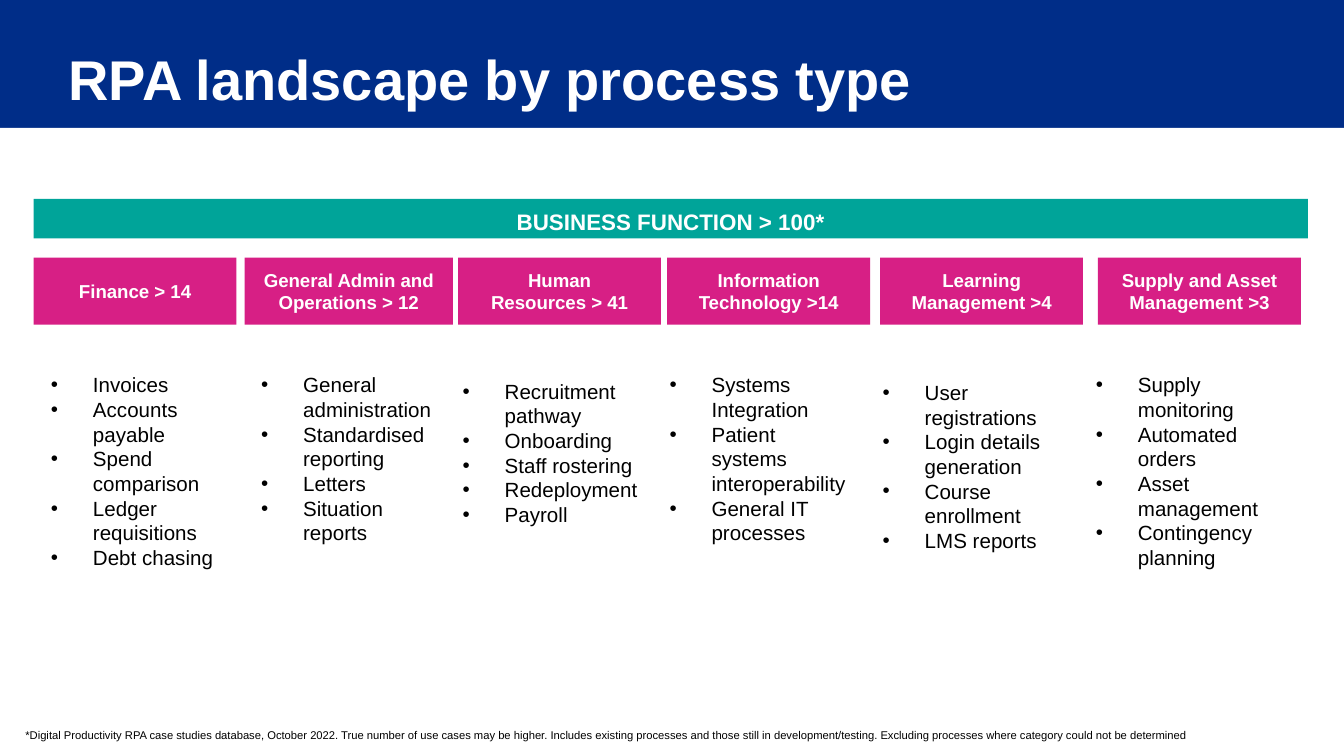
from lxml.etree import SubElement
from pptx import Presentation
from pptx.dml.color import RGBColor
from pptx.enum.shapes import MSO_SHAPE
from pptx.enum.text import MSO_ANCHOR, PP_ALIGN
from pptx.oxml.ns import qn
from pptx.util import Pt

NAVY = RGBColor(0x00, 0x2D, 0x88)
TEAL = RGBColor(0x00, 0xA4, 0x99)
PINK = RGBColor(0xD7, 0x1F, 0x85)
WHITE = RGBColor(0xFF, 0xFF, 0xFF)
BLACK = RGBColor(0x00, 0x00, 0x00)

INDENT = 22.5
LIST_W = 111.5

# Heading, its left and width; list left and top; list items
COLUMNS = [
    (["Finance > 14"], 18, 108.7, 20.2, 196,
     ["Invoices", "Accounts payable", "Spend comparison",
      "Ledger requisitions", "Debt chasing"]),
    (["General Admin and Operations > 12"], 131, 111.6, 132.8, 196,
     ["General administration", "Standardised reporting", "Letters",
      "Situation reports"]),
    (["Human", "Resources > 41"], 245.4, 108.7, 240.8, 199.4,
     ["Recruitment pathway", "Onboarding", "Staff rostering",
      "Redeployment", "Payroll"]),
    (["Information Technology >14"], 357.4, 108.7, 351.6, 196,
     ["Systems Integration", "Patient systems interoperability",
      "General IT processes"]),
    (["Learning Management >4"], 471.5, 108.7, 465.8, 200,
     ["User registrations", "Login details generation",
      "Course enrollment", "LMS reports"]),
    (["Supply and Asset Management >3"], 588.2, 108.7, 580, 196,
     ["Supply monitoring", "Automated orders", "Asset management",
      "Contingency planning"]),
]


def add_dot(para):
    props = para._p.get_or_add_pPr()
    props.set("marL", str(Pt(INDENT)))
    props.set("indent", str(-Pt(INDENT)))
    font = SubElement(props, qn("a:buFont"))
    font.set("typeface", "Arial")
    dot = SubElement(props, qn("a:buChar"))
    dot.set("char", "•")


def write(shape, lines, size=11, color=BLACK, bold=False, dots=False,
          align=PP_ALIGN.LEFT, anchor=MSO_ANCHOR.TOP, pad=(7.2, 3.6)):
    frame = shape.text_frame
    frame.word_wrap = True
    frame.vertical_anchor = anchor
    frame.margin_left = frame.margin_right = Pt(pad[0])
    frame.margin_top = frame.margin_bottom = Pt(pad[1])
    for i, line in enumerate(lines):
        para = frame.add_paragraph() if i else frame.paragraphs[0]
        para.alignment = align
        if dots:
            add_dot(para)
        run = para.add_run()
        run.text = line
        run.font.name = "Arial"
        run.font.size = Pt(size)
        run.font.bold = bold
        run.font.color.rgb = color


def add_bar(slide, x, y, w, h, fill):
    bar = slide.shapes.add_shape(MSO_SHAPE.RECTANGLE, Pt(x), Pt(y), Pt(w), Pt(h))
    bar.shadow.inherit = False
    bar.fill.solid()
    bar.fill.fore_color.rgb = fill
    bar.line.fill.background()
    return bar


def add_box(slide, x, y, w, h):
    return slide.shapes.add_textbox(Pt(x), Pt(y), Pt(w), Pt(h))


def main():
    deck = Presentation()
    deck.slide_width, deck.slide_height = Pt(720), Pt(405)
    slide = deck.slides.add_slide(deck.slide_layouts[6])

    # Navy title band above a white page
    slide.background.fill.solid()
    slide.background.fill.fore_color.rgb = NAVY
    add_bar(slide, 0, 68.5, 720, 336.5, WHITE)
    write(add_box(slide, 36.7, 21, 601, 41.5), ["RPA landscape by process type"],
          size=30, color=WHITE, bold=True, anchor=MSO_ANCHOR.MIDDLE, pad=(0, 0))

    # Banner over all columns
    banner = add_bar(slide, 18, 106.5, 682.7, 21.3, TEAL)
    write(banner, ["BUSINESS FUNCTION > 100*"], size=12, color=WHITE,
          bold=True, align=PP_ALIGN.CENTER, pad=(4.5, 5.2))

    # Business functions with their processes
    for head, left, width, x, y, items in COLUMNS:
        write(add_bar(slide, left, 138, width, 36, PINK), head, size=10,
              color=WHITE, bold=True, align=PP_ALIGN.CENTER,
              anchor=MSO_ANCHOR.MIDDLE, pad=(7.2, 5))
        write(add_box(slide, x, y, LIST_W, 150), items, dots=True)

    # Footnote
    write(add_box(slide, 6.5, 386.6, 660, 16),
          ["*Digital Productivity RPA case studies database, October 2022. "
           "True number of use cases may be higher. Includes existing processes "
           "and those still in development/testing. Excluding processes where "
           "category could not be determined"], size=6)

    deck.save("out.pptx")


if __name__ == "__main__":
    main()
